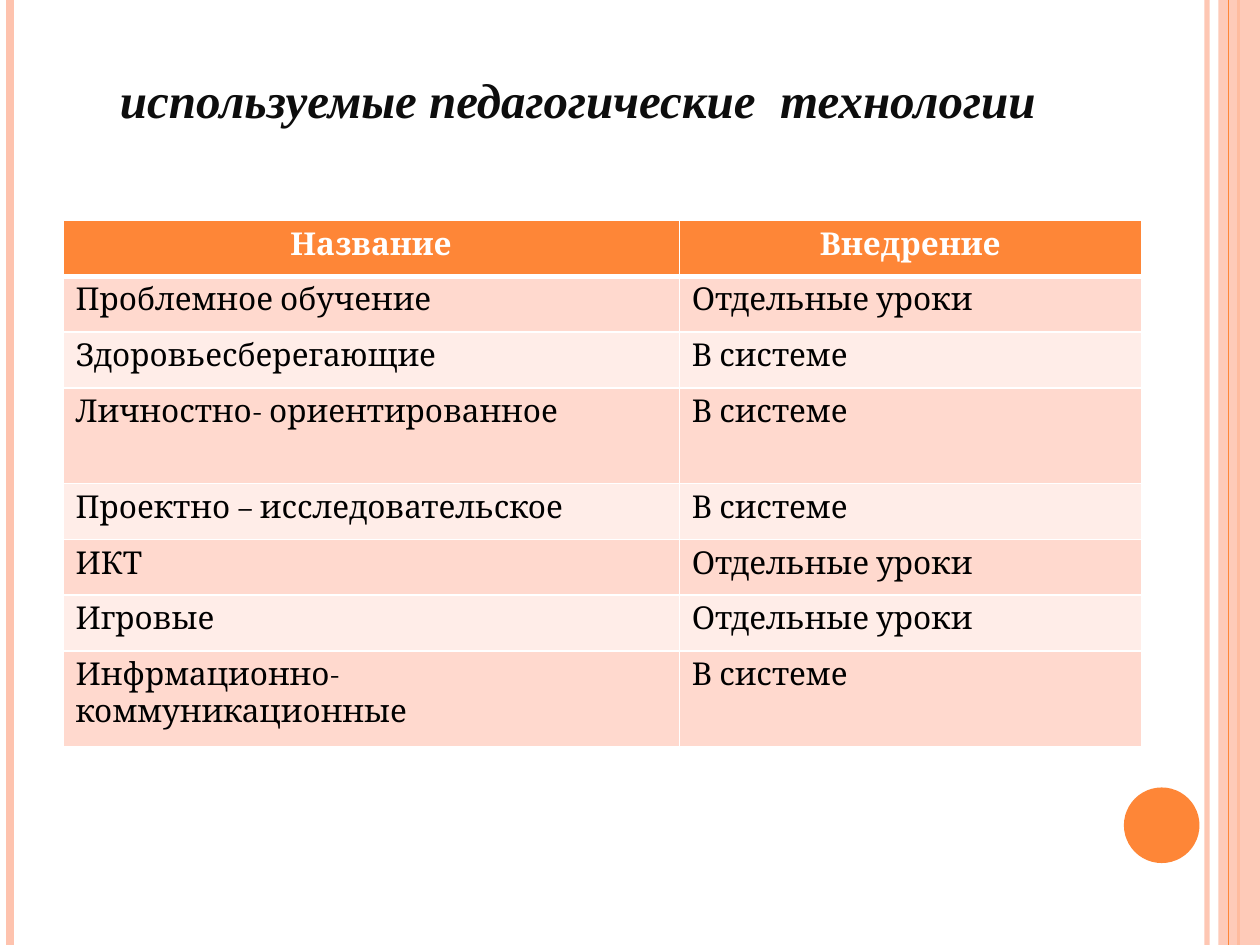
import pptx
import pptx.util
import pptx.dml.color
import pptx.enum.shapes
import pptx.enum.text
import pptx.oxml
import pptx.oxml.ns

COLORS = {"orange": "FE8637", "peach": "FEC3AE", "band": "FFD9CE",
          "pale": "FFEDE8", "white": "FFFFFF", "ink": "0D0D0D", "black": "000000"}
COLS, ROWS = 100, 75
ALIGN = pptx.enum.text.PP_ALIGN
SHAPE = pptx.enum.shapes.MSO_SHAPE
TITLE = {"name": "Times New Roman", "size": 28, "bold": True, "italic": True, "color": "ink"}
HEAD = {"name": "Cambria", "size": 18, "bold": True, "color": "white"}
BODY = {**HEAD, "bold": False, "color": "black"}


class Deck:
    def __init__(self):
        self.prs = pptx.Presentation()
        self.prs.slide_width = pptx.util.Inches(10)
        self.prs.slide_height = pptx.util.Inches(7.5)
        self.slide = self.prs.slides.add_slide(self.prs.slide_layouts[5])

    def x(self, cols):
        return round(self.prs.slide_width * cols / COLS)

    def y(self, rows):
        return round(self.prs.slide_height * rows / ROWS)

    def box(self, left, top, width, height):
        return self.x(left), self.y(top), self.x(width), self.y(height)

    def rgb(self, name):
        return pptx.dml.color.RGBColor.from_string(COLORS[name])

    def fade(self, sp, percent):
        color = sp._element.spPr.find(".//" + pptx.oxml.ns.qn("a:srgbClr"))
        color.append(pptx.oxml.parse_xml(
            f'<a:alpha {pptx.oxml.ns.nsdecls("a")} val="{percent * 1000}"/>'))

    def text(self, tf, text, style, align):
        p = tf.paragraphs[0]
        p.alignment = align
        r = p.add_run()
        r.text = text
        for key, value in style.items():
            if key == "color":
                r.font.color.rgb = self.rgb(value)
            else:
                setattr(r.font, key, pptx.util.Pt(value) if key == "size" else value)

    def title(self, text, *place):
        sp = self.slide.shapes.title
        sp.left, sp.top, sp.width, sp.height = self.box(*place)
        sp.text_frame.vertical_anchor = pptx.enum.text.MSO_ANCHOR.BOTTOM
        self.text(sp.text_frame, text, TITLE, ALIGN.CENTER)

    def stripe(self, col, width, color, alpha=100):
        sp = self.slide.shapes.add_connector(
            pptx.enum.shapes.MSO_CONNECTOR.STRAIGHT, self.x(col), 0, self.x(col), self.y(ROWS))
        sp.line.width = pptx.util.Pt(width)
        sp.line.color.rgb = self.rgb(color)
        sp._element.spPr.append(pptx.oxml.parse_xml(
            f'<a:effectLst {pptx.oxml.ns.nsdecls("a")}/>'))
        if alpha < 100:
            self.fade(sp, alpha)

    def shape(self, kind, color, *place, alpha=100):
        sp = self.slide.shapes.add_shape(kind, *self.box(*place))
        sp.shadow.inherit = False
        sp.fill.solid()
        sp.fill.fore_color.rgb = self.rgb(color)
        sp.line.fill.background()
        if alpha < 100:
            self.fade(sp, alpha)

    def cell(self, cell, text, style, align, fill, **borders):
        self.text(cell.text_frame, text, style, align)
        tcPr = cell._tc.get_or_add_tcPr()
        for side in "LRTB":
            width = pptx.util.Pt(borders.get(side, 1))
            tcPr.append(pptx.oxml.parse_xml(
                f'<a:ln{side} {pptx.oxml.ns.nsdecls("a")} w="{width}"><a:solidFill>'
                f'<a:srgbClr val="{COLORS["white"]}"/></a:solidFill></a:ln{side}>'))
        cell.fill.solid()
        cell.fill.fore_color.rgb = self.rgb(fill)

    def table(self, rows, widths, heights, *place):
        left, top, width, height = self.box(*place)
        table = self.slide.shapes.add_table(
            len(rows), len(widths), left, top, width, height).table
        for col, share in zip(table.columns, widths):
            col.width = round(width * share / sum(widths))
        for row, share in zip(table.rows, heights):
            row.height = round(height * share / sum(heights))
        for i, texts in enumerate(rows):
            for j, text in enumerate(texts):
                if i == 0:
                    self.cell(table.cell(i, j), text, HEAD, ALIGN.CENTER, "orange", B=3)
                else:
                    self.cell(table.cell(i, j), text, BODY, ALIGN.LEFT,
                              "band" if i % 2 else "pale", T=3 if i == 1 else 1)


def main():
    deck = Deck()
    deck.stripe(95.8, 3, "peach", alpha=93)
    deck.stripe(0.8, 4.5, "peach")
    deck.stripe(98.3, 1.5, "orange")
    deck.shape(SHAPE.RECTANGLE, "peach", 96.7, 0, 3.3, ROWS, alpha=87)
    deck.stripe(97.5, 0.75, "orange")
    deck.shape(SHAPE.OVAL, "orange", 89.2, 62.5, 6, 6)
    deck.title("используемые педагогические  технологии", 5, 3, 81.7, 7.7)
    single, system = "Отдельные уроки", "В системе"
    technologies = [
        ("Название", "Внедрение"),
        ("Проблемное обучение", single),
        ("Здоровьесберегающие", system),
        ("Личностно- ориентированное", system),
        ("Проектно – исследовательское", system),
        ("ИКТ", single),
        ("Игровые", single),
        ("Инфрмационно-коммуникационные", system),
    ]
    heights = [1.72 if i in (3, 7) else 1 for i in range(len(technologies))]
    deck.table(technologies, (4, 3), heights, 5, 17.5, 85.6, 41.8)
    deck.prs.save("out.pptx")


if __name__ == "__main__":
    main()
